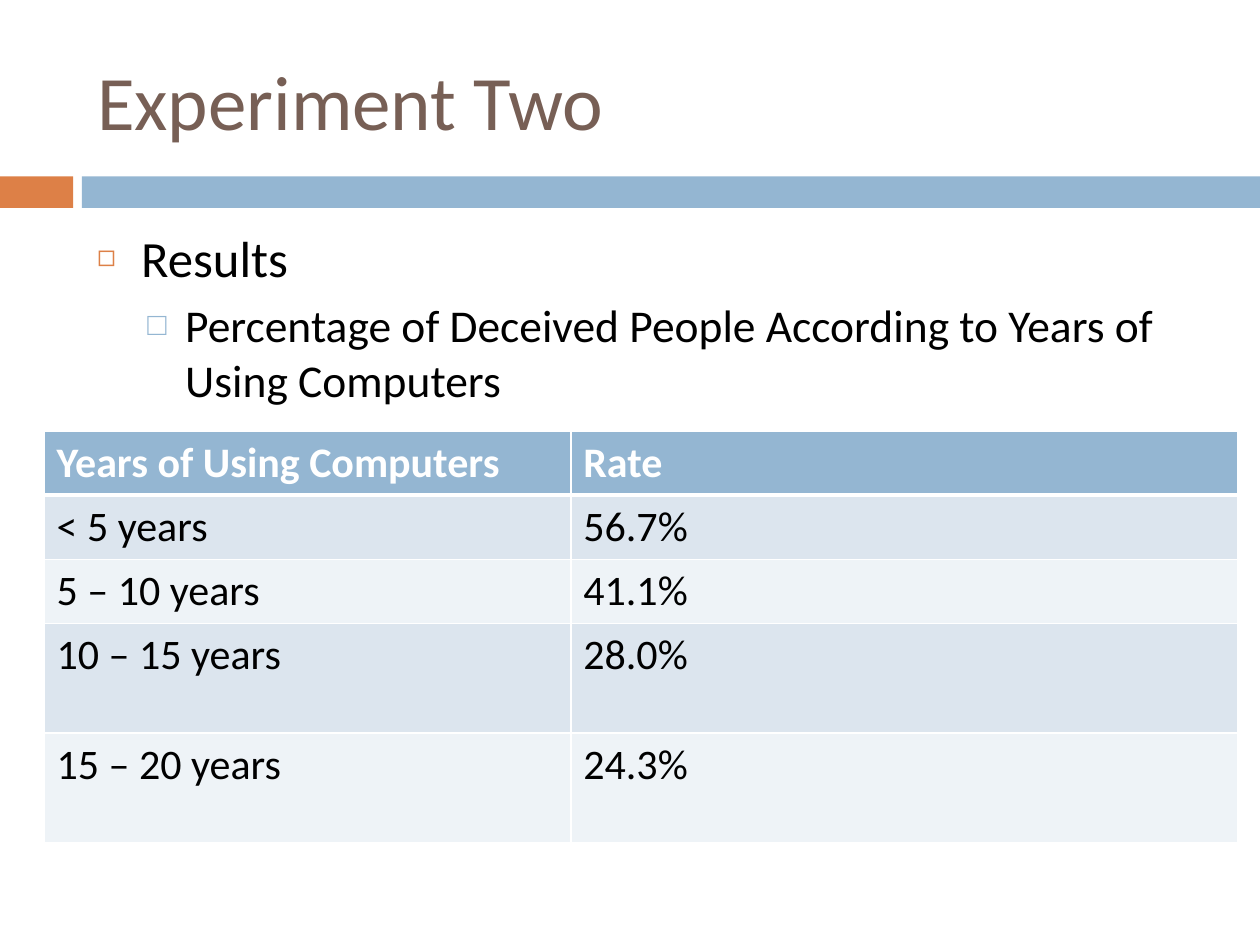
from lxml.etree import SubElement
from pptx import Presentation
from pptx.dml.color import RGBColor
from pptx.enum.shapes import MSO_SHAPE
from pptx.enum.text import MSO_ANCHOR, MSO_AUTO_SIZE, PP_ALIGN
from pptx.oxml.ns import qn
from pptx.util import Inches, Pt

FONT = "Calibri"
ORANGE = RGBColor(0xDD, 0x80, 0x47)
BLUE = RGBColor(0x94, 0xB6, 0xD2)
BROWN = RGBColor(0x77, 0x5F, 0x55)
BLACK = RGBColor(0, 0, 0)
WHITE = RGBColor(0xFF, 0xFF, 0xFF)
BANDS = [RGBColor(0xDC, 0xE5, 0xEE), RGBColor(0xEE, 0xF3, 0xF7)]

BULLETS = [
    ("Results", 29, 7, 0.35, 0.35, "◻", ORANGE, 60),
    ("Percentage of Deceived People According to Years of Using Computers",
     26, 5.5, 0.7, 0.3, "□", BLUE, 70),
]
RATES = [
    ("Years of Using Computers", "Rate"),
    ("< 5 years", "56.7%"),
    ("5 – 10 years", "41.1%"),
    ("10 – 15 years", "28.0%"),
    ("15 – 20 years", "24.3%"),
]
COL_WIDTHS = [4.18, 5.29]
ROW_HEIGHTS = [0.51, 0.51, 0.51, 0.87, 0.87]


def place(sp, box):
    sp.left, sp.top, sp.width, sp.height = (Inches(v) for v in box)


def style(p, size, color, bold=False):
    for r in p.runs:
        r.font.name = FONT
        r.font.size = Pt(size)
        r.font.bold = bold
        r.font.color.rgb = color


def add_band(slide, box, split, gap):
    left, top, width, height = box
    right = split + gap
    for x, w, color in [(left, split, ORANGE), (left + right, width - right, BLUE)]:
        sp = slide.shapes.add_shape(
            MSO_SHAPE.RECTANGLE, *(Inches(v) for v in (x, top, w, height)))
        sp.shadow.inherit = False
        sp.fill.solid()
        sp.fill.fore_color.rgb = color
        sp.line.fill.background()


def fill_title(slide, box, text):
    sp = slide.shapes.title
    place(sp, box)
    tf = sp.text_frame
    tf.text = text
    tf.auto_size = MSO_AUTO_SIZE.NONE
    tf.vertical_anchor = MSO_ANCHOR.MIDDLE
    p = tf.paragraphs[0]
    p.alignment = PP_ALIGN.LEFT
    style(p, 44, BROWN)


def set_bullet(p, char, color, percent, margin, hanging):
    pPr = p._p.get_or_add_pPr()
    pPr.set("marL", str(Inches(margin)))
    pPr.set("indent", str(-Inches(hanging)))
    clr = SubElement(pPr, qn("a:buClr"))
    SubElement(clr, qn("a:srgbClr"), val=str(color))
    SubElement(pPr, qn("a:buSzPct"), val=str(percent * 1000))
    SubElement(pPr, qn("a:buChar"), char=char)


def fill_body(slide, box):
    sp = slide.placeholders[1]
    place(sp, box)
    tf = sp.text_frame
    tf.auto_size = MSO_AUTO_SIZE.NONE
    for level, (text, size, before, margin, hanging, char, color, percent) in enumerate(BULLETS):
        p = tf.add_paragraph() if level else tf.paragraphs[0]
        p.text = text
        p.level = level
        p.space_before = Pt(before)
        set_bullet(p, char, color, percent, margin, hanging)
        style(p, size, BLACK)


def set_borders(cell, widths):
    tcPr = cell._tc.get_or_add_tcPr()
    for side, width in zip("LRTB", widths):
        ln = SubElement(tcPr, qn(f"a:ln{side}"), w=str(Pt(width)))
        fill = SubElement(ln, qn("a:solidFill"))
        SubElement(fill, qn("a:srgbClr"), val=str(WHITE))


def add_rates(slide, box):
    table = slide.shapes.add_table(
        len(RATES), len(COL_WIDTHS), *(Inches(v) for v in box)).table
    for col, width in zip(table.columns, COL_WIDTHS):
        col.width = Inches(width)
    for row, height in zip(table.rows, ROW_HEIGHTS):
        row.height = Inches(height)
    for i, values in enumerate(RATES):
        header = i == 0
        for j, value in enumerate(values):
            cell = table.cell(i, j)
            cell.text = value
            set_borders(cell, (1, 1, 3 if i == 1 else 1, 3 if header else 1))
            cell.fill.solid()
            cell.fill.fore_color.rgb = BLUE if header else BANDS[(i - 1) % 2]
            style(cell.text_frame.paragraphs[0], 24, WHITE if header else BLACK, header)


def main():
    prs = Presentation()
    prs.slide_width, prs.slide_height = Inches(10), Inches(7.5)
    slide = prs.slides.add_slide(prs.slide_layouts[1])
    add_band(slide, (0, 1.4, 10, 0.25), 0.58, 0.07)
    fill_title(slide, (0.67, 0.25, 8.92, 1.08), "Experiment Two")
    fill_body(slide, (0.67, 1.75, 8.92, 4.92))
    add_rates(slide, (0.35, 3.42, sum(COL_WIDTHS), sum(ROW_HEIGHTS)))
    prs.save("out.pptx")


if __name__ == "__main__":
    main()
